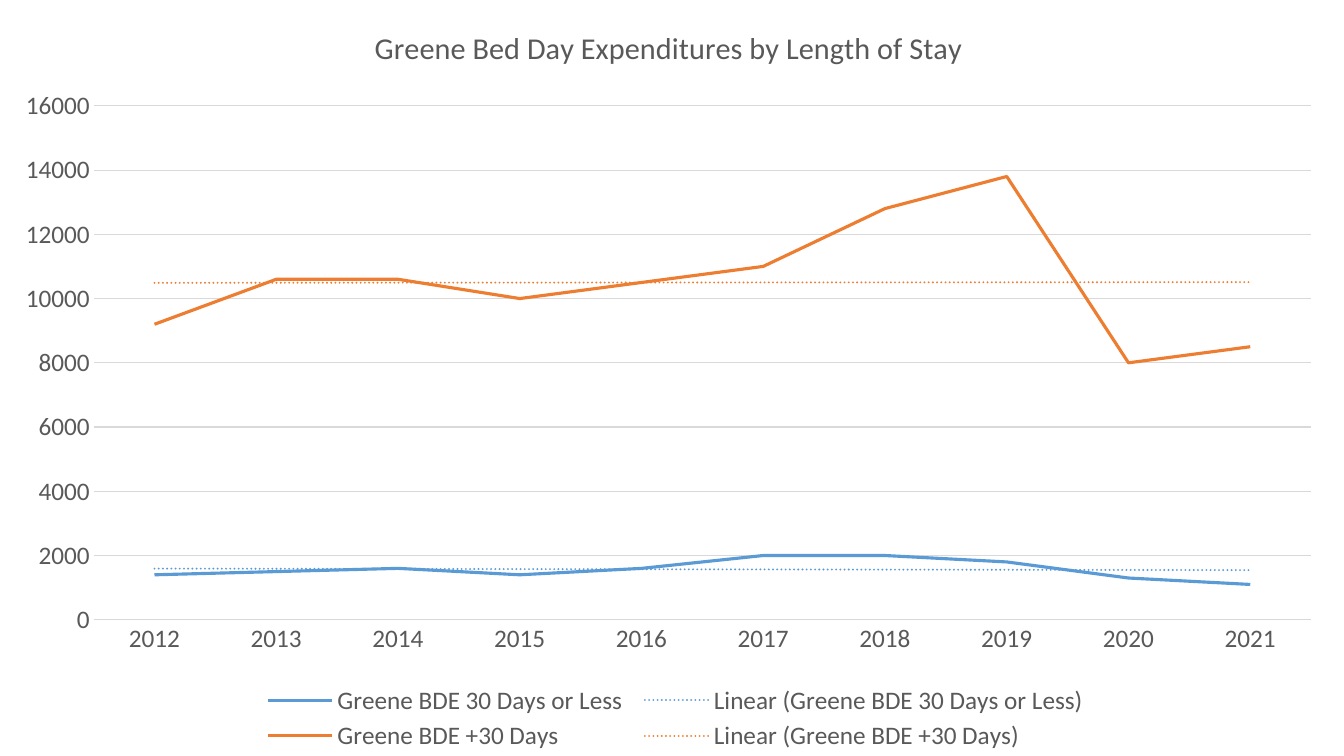
"""Build a slide with a line chart of Greene bed day expenditures by length of stay."""
from dataclasses import dataclass

from lxml.etree import _Element
from pptx import Presentation
from pptx.chart.chart import Chart
from pptx.chart.data import CategoryChartData
from pptx.dml.color import RGBColor
from pptx.enum.chart import XL_CHART_TYPE, XL_LEGEND_POSITION, XL_TICK_MARK
from pptx.oxml import parse_xml
from pptx.oxml.ns import nsdecls, qn
from pptx.util import Inches, Pt


@dataclass(frozen=True)
class Theme:
    font: str = "Calibri"
    text: str = "595959"
    grid: str = "D9D9D9"
    title_size: float = 21.6
    label_size: float = 18
    grid_width: float = 0.75
    series_width: float = 2.25
    trend_width: float = 1.5


@dataclass(frozen=True)
class StayGroup:
    name: str
    color: str
    bed_days: tuple[int, ...]


@dataclass(frozen=True)
class Area:
    x: float
    y: float
    w: float
    h: float


THEME = Theme()
YEARS = [str(year) for year in range(2012, 2022)]
STAY_GROUPS = (
    StayGroup("Greene BDE 30 Days or Less", "5B9BD5",
              (1400, 1500, 1600, 1400, 1600, 2000, 2000, 1800, 1300, 1100)),
    StayGroup("Greene BDE +30 Days", "ED7D31",
              (9200, 10600, 10600, 10000, 10500, 11000, 12800, 13800, 8000, 8500)),
)
PLOT_AREA = Area(0.07, 0.14, 0.91, 0.68)
LEGEND_AREA = Area(0.19, 0.9, 0.63, 0.1)


def apply(target: object, values: dict[str, object]) -> None:
    """Set each named attribute on the target."""
    for name, value in values.items():
        setattr(target, name, value)


def style_font(font: object, size: float) -> None:
    """Give a font the theme face and colour at the given size."""
    apply(font, {"name": THEME.font, "size": Pt(size), "bold": False})
    font.color.rgb = RGBColor.from_string(THEME.text)


def style_line(line: object, color: str, width: float) -> None:
    """Give a line a solid colour and a width in points."""
    line.color.rgb = RGBColor.from_string(color)
    line.width = Pt(width)


def place(parent: _Element, area: Area, index: int, inner: bool = False) -> None:
    """Position a chart part by fractions of the chart area."""
    for old_layout in parent.findall(qn("c:layout")):
        parent.remove(old_layout)
    target = '<c:layoutTarget val="inner"/>' if inner else ""
    parent.insert(index, parse_xml(
        f'<c:layout {nsdecls("c")}><c:manualLayout>{target}'
        '<c:xMode val="edge"/><c:yMode val="edge"/>'
        f'<c:x val="{area.x}"/><c:y val="{area.y}"/>'
        f'<c:w val="{area.w}"/><c:h val="{area.h}"/>'
        '</c:manualLayout></c:layout>'))


def add_trend(series: _Element, color: str) -> None:
    """Add a dotted linear trend line to a series."""
    series.find(qn("c:cat")).addprevious(parse_xml(
        f'<c:trendline {nsdecls("c", "a")}><c:spPr>'
        f'<a:ln w="{Pt(THEME.trend_width)}" cap="rnd"><a:solidFill>'
        f'<a:srgbClr val="{color}"/></a:solidFill><a:prstDash val="sysDot"/></a:ln>'
        '</c:spPr><c:trendlineType val="linear"/>'
        '<c:dispRSqr val="0"/><c:dispEq val="0"/></c:trendline>'))


def style_axes(chart: Chart) -> None:
    """Format both axes and the horizontal gridlines."""
    for axis in (chart.category_axis, chart.value_axis):
        apply(axis, {"major_tick_mark": XL_TICK_MARK.NONE,
                     "minor_tick_mark": XL_TICK_MARK.NONE})
        style_font(axis.tick_labels.font, THEME.label_size)
    style_line(chart.category_axis.format.line, THEME.grid, THEME.grid_width)
    apply(chart.value_axis, {"minimum_scale": 0, "maximum_scale": 16000,
                             "major_unit": 2000, "has_major_gridlines": True})
    chart.value_axis.format.line.fill.background()
    style_line(chart.value_axis.major_gridlines.format.line,
               THEME.grid, THEME.grid_width)


def style_series(chart: Chart) -> None:
    """Colour each stay group and add its trend."""
    chart.plots[0].vary_by_categories = False
    for series, group in zip(chart.plots[0].series, STAY_GROUPS):
        series.smooth = False
        style_line(series.format.line, group.color, THEME.series_width)
        add_trend(series._element, group.color)


def style_title_and_legend(chart: Chart, title: str) -> None:
    """Write the chart title and set up the bottom legend."""
    apply(chart, {"has_title": True, "has_legend": True})
    heading = chart.chart_title.text_frame
    heading.text = title
    style_font(heading.paragraphs[0].runs[0].font, THEME.title_size)
    apply(chart.legend, {"position": XL_LEGEND_POSITION.BOTTOM,
                         "include_in_layout": False})
    style_font(chart.legend.font, THEME.label_size)
    place(chart.legend._element, LEGEND_AREA, 1)


def main() -> None:
    """Create the presentation and save it."""
    presentation = Presentation()
    apply(presentation, {"slide_width": Inches(13.33), "slide_height": Inches(7.5)})
    slide = presentation.slides.add_slide(presentation.slide_layouts[6])

    expenditures = CategoryChartData()
    expenditures.categories = YEARS
    for group in STAY_GROUPS:
        expenditures.add_series(group.name, group.bed_days)
    chart = slide.shapes.add_chart(
        XL_CHART_TYPE.LINE, Inches(0), Inches(0), Inches(13.27), Inches(7.5),
        expenditures).chart

    style_font(chart.font, THEME.label_size)
    style_axes(chart)
    style_series(chart)
    style_title_and_legend(chart, "Greene Bed Day Expenditures by Length of Stay")
    place(chart._chartSpace.chart.plotArea, PLOT_AREA, 0, inner=True)
    presentation.save("out.pptx")


if __name__ == "__main__":
    main()
